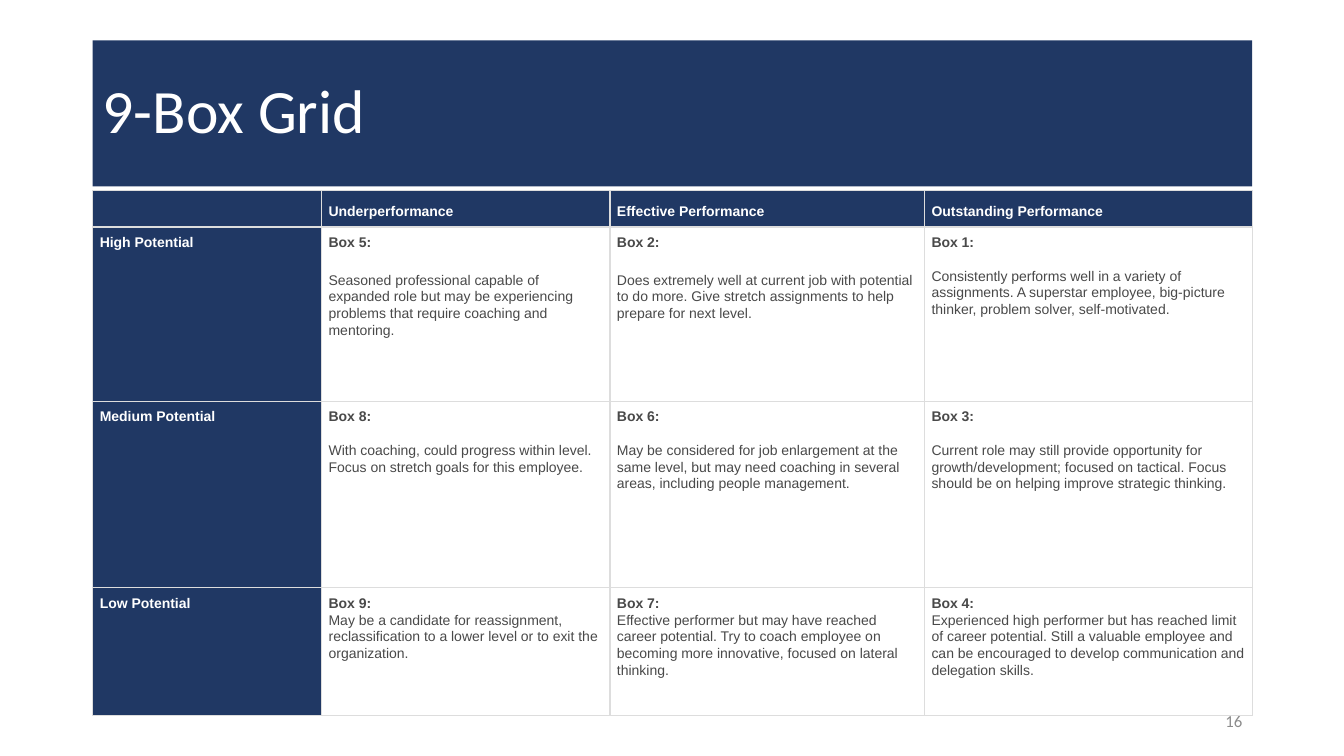
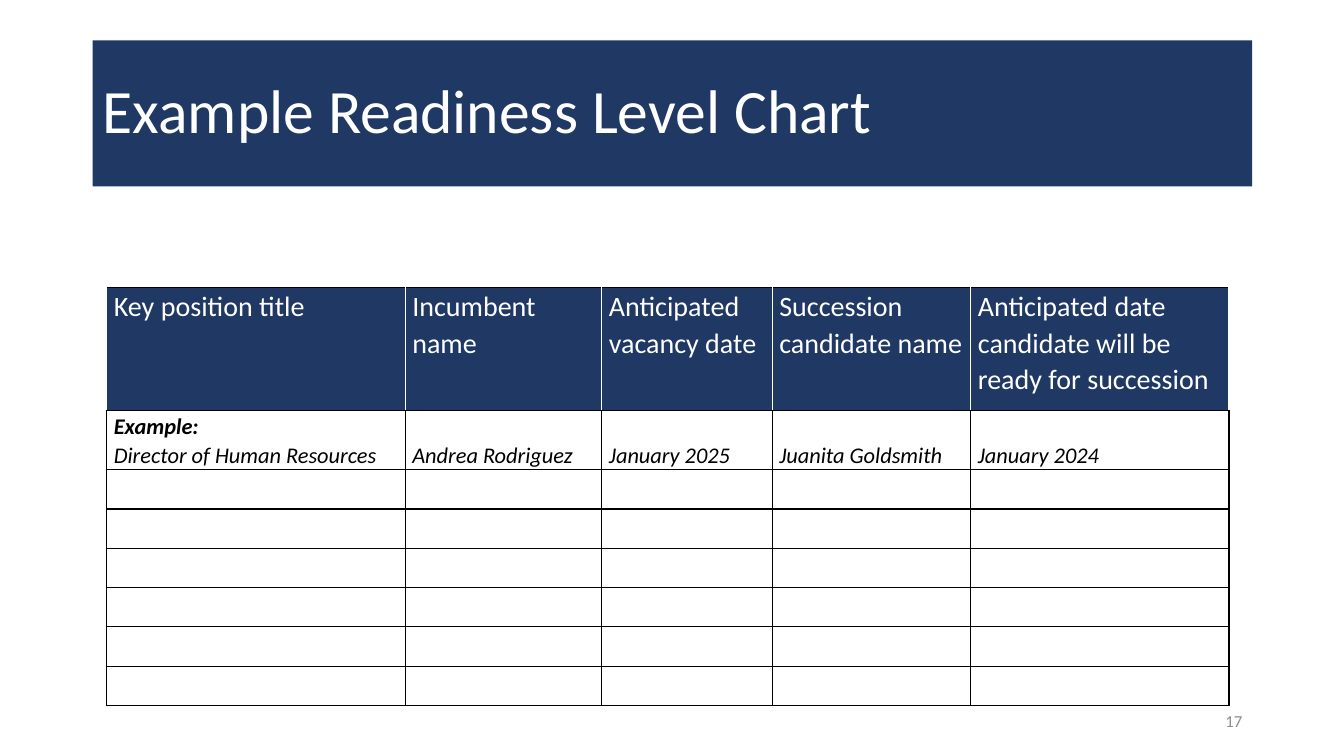
from lxml import etree
from pptx import Presentation
from pptx.dml.color import RGBColor
from pptx.enum.shapes import MSO_SHAPE
from pptx.enum.text import MSO_ANCHOR, PP_ALIGN
from pptx.oxml.ns import qn
from pptx.util import Inches, Pt

RECT = MSO_SHAPE.RECTANGLE
TOP, MIDDLE, BOTTOM = MSO_ANCHOR.TOP, MSO_ANCHOR.MIDDLE, MSO_ANCHOR.BOTTOM
LEFT, RIGHT = PP_ALIGN.LEFT, PP_ALIGN.RIGHT

COLORS = {
    "navy": "203864",
    "white": "FFFFFF",
    "black": "000000",
    "body": "494949",
    "rule": "DDDDDD",
    "number": "8C8C8C",
}
TITLE_BOX = (0.92, 0.4, 11.5, 1.45)
NUMBER_BOX = (9.42, 6.95, 3, 0.4)
GRID_BOX = (0.92, 1.89)
READINESS_BOX = (1.06, 2.85)

GRID_COLS = [2.27, 2.86, 3.12, 3.25]
GRID_HEADS = ["Underperformance", "Effective Performance", "Outstanding Performance"]
# Each row: label, height, then (box number, gap under the heading in points, description)
GRID_ROWS = [
    ("High Potential", 1.73, [
        (5, 15, "Seasoned professional capable of expanded role but may be experiencing "
                "problems that require coaching and mentoring."),
        (2, 15, "Does extremely well at current job with potential to do more. Give stretch "
                "assignments to help prepare for next level."),
        (1, 12, "Consistently performs well in a variety of assignments. A superstar employee, "
                "big-picture thinker, problem solver, self-motivated."),
    ]),
    ("Medium Potential", 1.85, [
        (8, 12, "With coaching, could progress within level. Focus on stretch goals for this "
                "employee."),
        (6, 12, "May be considered for job enlargement at the same level, but may need coaching "
                "in several areas, including people management."),
        (3, 12, "Current role may still provide opportunity for growth/development; focused on "
                "tactical. Focus should be on helping improve strategic thinking."),
    ]),
    ("Low Potential", 1.27, [
        (9, 0, "May be a candidate for reassignment, reclassification to a lower level or to "
               "exit the organization."),
        (7, 0, "Effective performer but may have reached career potential. Try to coach "
               "employee on becoming more innovative, focused on lateral thinking."),
        (4, 0, "Experienced high performer but has reached limit of career potential. Still a "
               "valuable employee and can be encouraged to develop communication and "
               "delegation skills."),
    ]),
]

READINESS_COLS = [2.96, 1.95, 1.69, 1.97, 2.56]
READINESS_ROWS = [1.22, 0.59] + [0.39] * 6
READINESS_HEADS = [
    "Key position title", "Incumbent name", "Anticipated vacancy date",
    "Succession candidate name", "Anticipated date candidate will be ready for succession",
]
EXAMPLE = ["Director of Human Resources", "Andrea Rodriguez", "January 2025",
           "Juanita Goldsmith", "January 2024"]


def rgb(name):
    return RGBColor.from_string(COLORS[name])


def add_text(tf, text, size=10, font="Arial", color="white", bold=False, italic=False,
             align=LEFT, spacing=1.07, after=0):
    """Add a paragraph, using the first one while it is still empty."""
    p = tf.paragraphs[0] if not tf.text else tf.add_paragraph()
    p.alignment, p.line_spacing, p.space_after = align, spacing, Pt(after)
    r = p.add_run()
    r.text = text
    r.font.size, r.font.name = Pt(size), font
    r.font.bold, r.font.italic = bold, italic
    r.font.color.rgb = rgb(color)


def add_title(s, box, text):
    sp = s.shapes.add_shape(RECT, *map(Inches, box))
    sp.shadow.inherit = False
    sp.fill.solid()
    sp.fill.fore_color.rgb = rgb("navy")
    sp.line.fill.background()
    tf = sp.text_frame
    tf.word_wrap, tf.vertical_anchor = True, MIDDLE
    add_text(tf, text, size=44, font="Calibri", spacing=0.9)


def add_number(s, box, number):
    tf = s.shapes.add_textbox(*map(Inches, box)).text_frame
    tf.word_wrap, tf.vertical_anchor = True, MIDDLE
    add_text(tf, str(number), size=12, font="Calibri", color="number", align=RIGHT, spacing=1)


def add_table(s, corner, cols, rows):
    """Add a plain table whose size follows from its columns and rows."""
    size = (sum(cols), sum(rows))
    table = s.shapes.add_table(len(rows), len(cols), *map(Inches, (*corner, *size))).table
    table.first_row = table.horz_banding = False
    for col, width in zip(table.columns, cols):
        col.width = Inches(width)
    for row, height in zip(table.rows, rows):
        row.height = Inches(height)
    return table


def style_cell(cell, borders, fill=None, anchor=TOP, pad=0.0):
    """Set fill, margins and borders; borders maps L, R, T, B to (colour, points)."""
    cell.margin_left = cell.margin_right = Inches(0.07)
    cell.margin_top = cell.margin_bottom = Inches(pad)
    cell.vertical_anchor = anchor
    if fill:
        cell.fill.solid()
        cell.fill.fore_color.rgb = rgb(fill)
    else:
        cell.fill.background()
    props = cell._tc.get_or_add_tcPr()
    for i, side in enumerate("LRTB"):
        color, width = borders[side]
        line = etree.Element(qn(f"a:ln{side}"), w=str(Pt(width)))
        solid = etree.SubElement(line, qn("a:solidFill"))
        etree.SubElement(solid, qn("a:srgbClr"), val=COLORS[color])
        props.insert(i, line)


def add_nine_box(s, corner):
    heights = [0.36] + [height for _, height, _ in GRID_ROWS]
    table = add_table(s, corner, GRID_COLS, heights)
    for i in range(len(heights)):
        borders = dict.fromkeys("LRTB", ("rule", 1))
        if i < 2:
            borders["B" if i == 0 else "T"] = ("rule", 1.5)
        for j in range(len(GRID_COLS)):
            # The empty corner cell has no padding, so it cannot stretch the header row
            style_cell(table.cell(i, j), borders, fill="navy" if i == 0 or j == 0 else None,
                       anchor=BOTTOM if i == 0 else TOP, pad=0.07 if i or j else 0)
    for j, head in enumerate(GRID_HEADS, 1):
        add_text(table.cell(0, j).text_frame, head, bold=True)
    for i, (label, _, boxes) in enumerate(GRID_ROWS, 1):
        add_text(table.cell(i, 0).text_frame, label, bold=True)
        for j, (number, gap, description) in enumerate(boxes, 1):
            tf = table.cell(i, j).text_frame
            add_text(tf, f"Box {number}:", color="body", bold=True, after=gap)
            add_text(tf, description, color="body")


def add_readiness_chart(s, corner):
    table = add_table(s, corner, READINESS_COLS, READINESS_ROWS)
    black, white = ("black", 1), ("white", 1)
    for i in range(len(READINESS_ROWS)):
        side = white if i == 0 else black
        borders = {"L": side, "R": side, "T": black, "B": black}
        for j in range(len(READINESS_COLS)):
            style_cell(table.cell(i, j), borders, fill="navy" if i == 0 else None,
                       anchor=BOTTOM if i == 1 else TOP)
    example_style = dict(size=16, font="Calibri", color="black", italic=True)
    add_text(table.cell(1, 0).text_frame, "Example:", bold=True, **example_style)
    for j, (head, value) in enumerate(zip(READINESS_HEADS, EXAMPLE)):
        add_text(table.cell(0, j).text_frame, head, size=20, font="Calibri")
        add_text(table.cell(1, j).text_frame, value, **example_style)


def add_slide(prs, title, number, add_body, corner):
    s = prs.slides.add_slide(prs.slide_layouts[6])
    add_title(s, TITLE_BOX, title)
    add_number(s, NUMBER_BOX, number)
    add_body(s, corner)


def main():
    prs = Presentation()
    prs.slide_width, prs.slide_height = Inches(13.33), Inches(7.5)
    add_slide(prs, "9-Box Grid", 16, add_nine_box, GRID_BOX)
    add_slide(prs, "Example Readiness Level Chart", 17, add_readiness_chart, READINESS_BOX)
    prs.save("out.pptx")


if __name__ == "__main__":
    main()
